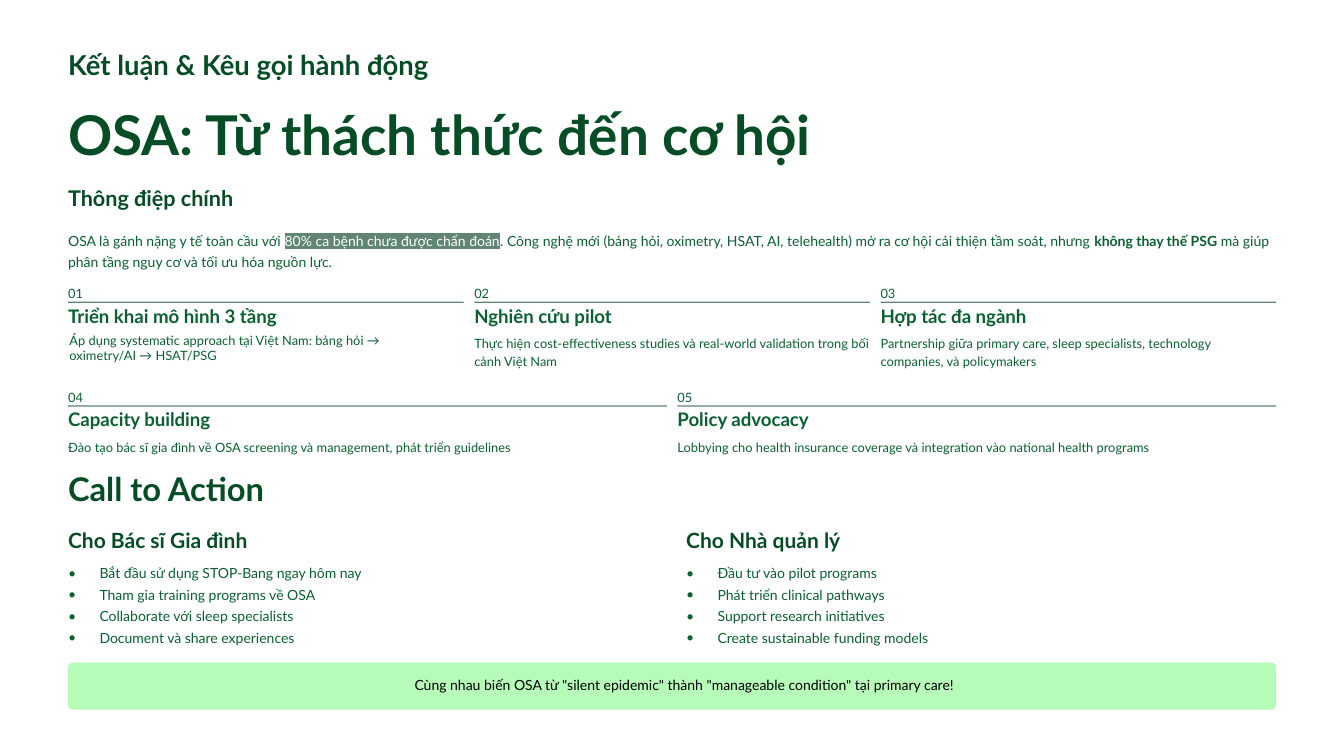
from lxml.etree import SubElement
from pptx import Presentation
from pptx.dml.color import RGBColor
from pptx.enum.shapes import MSO_SHAPE
from pptx.enum.text import PP_ALIGN
from pptx.oxml import parse_xml
from pptx.oxml.ns import qn
from pptx.util import Cm, Pt

DARK, GREEN, MUTED, MINT, WHITE = "064D26", "096130", "608571", "B6FCB8", "FFFFFF"
DRAWING_NS = "http://schemas.openxmlformats.org/drawingml/2006/main"
PAGE_WIDTH, PAGE_HEIGHT = 40.64, 22.86
LEFT, WIDTH, GAP = 2.06, 36.53, 0.32

MESSAGE = [
    ("OSA là gánh nặng y tế toàn cầu với ", {}),
    ("80% ca bệnh chưa được chẩn đoán", {"color": WHITE, "highlight": MUTED}),
    (". Công nghệ mới (bảng hỏi, oximetry, HSAT, AI, telehealth) mở ra cơ hội "
     "cải thiện tầm soát, nhưng ", {}),
    ("không thay thế PSG", {"bold": True}),
    (" mà giúp phân tầng nguy cơ và tối ưu hóa nguồn lực.", {}),
]
TOP_STEPS = [
    ("01", "Triển khai mô hình 3 tầng",
     "Áp dụng systematic approach tại Việt Nam: bảng hỏi → oximetry/AI → HSAT/PSG"),
    ("02", "Nghiên cứu pilot",
     "Thực hiện cost-effectiveness studies và real-world validation trong bối cảnh Việt Nam"),
    ("03", "Hợp tác đa ngành",
     "Partnership giữa primary care, sleep specialists, technology companies, và policymakers"),
]
BOTTOM_STEPS = [
    ("04", "Capacity building",
     "Đào tạo bác sĩ gia đình về OSA screening và management, phát triển guidelines"),
    ("05", "Policy advocacy",
     "Lobbying cho health insurance coverage và integration vào national health programs"),
]
ACTIONS = [
    ("Cho Bác sĩ Gia đình", [
        "Bắt đầu sử dụng STOP-Bang ngay hôm nay",
        "Tham gia training programs về OSA",
        "Collaborate với sleep specialists",
        "Document và share experiences"]),
    ("Cho Nhà quản lý", [
        "Đầu tư vào pilot programs",
        "Phát triển clinical pathways",
        "Support research initiatives",
        "Create sustainable funding models"]),
]


def paint(fill, color):
    fill.solid()
    fill.fore_color.rgb = RGBColor.from_string(color)


def add_run(paragraph, content, size, color, bold=False, highlight=None):
    run = paragraph.add_run()
    run.text = content
    font = run.font
    font.name, font.size, font.bold = "Lato", Pt(size), bold
    paint(font.fill, color)
    if highlight:
        mark = parse_xml(f'<a:highlight xmlns:a="{DRAWING_NS}">'
                         f'<a:srgbClr val="{highlight}"/></a:highlight>')
        run._r.rPr.find(qn("a:solidFill")).addnext(mark)


def add_bullet(paragraph):
    properties = paragraph._p.get_or_add_pPr()
    properties.set("marL", str(Cm(0.95)))
    properties.set("indent", str(-Cm(0.95)))
    SubElement(properties, qn("a:buSzPct")).set("val", "100000")
    SubElement(properties, qn("a:buFont")).set("typeface", "Lato")
    SubElement(properties, qn("a:buChar")).set("char", "•")


def add_text(slide, box, paragraphs, size=12, color=GREEN, bold=False, line=15,
             align=PP_ALIGN.LEFT, bullets=False, after=0, inset=(0, 0)):
    """Place paragraphs, each a string or a list of (text, run format) pairs."""
    frame = slide.shapes.add_textbox(*map(Cm, box)).text_frame
    frame.word_wrap = True
    frame.margin_left = frame.margin_right = Cm(inset[0])
    frame.margin_top = frame.margin_bottom = Cm(inset[1])
    for index, content in enumerate(paragraphs):
        paragraph = frame.add_paragraph() if index else frame.paragraphs[0]
        paragraph.alignment = align
        paragraph.space_after = Pt(after)
        if line:
            paragraph.line_spacing = Pt(line)
        if bullets:
            add_bullet(paragraph)
        runs = [(content, {})] if isinstance(content, str) else content
        for words, changes in runs:
            add_run(paragraph, words,
                    **{"size": size, "color": color, "bold": bold, **changes})


def add_block(slide, box, color, preset=MSO_SHAPE.RECTANGLE):
    block = slide.shapes.add_shape(preset, *map(Cm, box))
    block.shadow.inherit = False
    paint(block.fill, color)
    block.line.fill.background()
    return block


def add_header(slide, left, top, width):
    heading = {"color": DARK, "bold": True}
    add_text(slide, (left, top, 12.73, 1.04), ["Kết luận & Kêu gọi hành động"],
             size=23.5, line=29.5, **heading)
    add_text(slide, (left, top + 1.53, 25.91, 2.08), ["OSA: Từ thách thức đến cơ hội"],
             size=47, line=59, **heading)
    add_text(slide, (left, top + 4.12, 6.68, 0.84), ["Thông điệp chính"],
             size=18.5, line=23.5, **heading)
    add_text(slide, (left, top + 5.46, width, 1.35), [MESSAGE], line=18.5)


def add_step(slide, left, top, width, step, height, compact=False):
    number, name, detail = step
    add_text(slide, (left, top, 0.8, 0.41), [number], size=11)
    add_block(slide, (left, top + 0.53, width, 0.04), MUTED)
    add_text(slide, (left, top + 0.78, 7, 0.53), [name], size=16, bold=True, line=14.5)
    if compact:
        add_text(slide, (left - 0.21, top + 1.34, width, 1.68), [detail], size=11,
                 line=None, inset=(0.25, 0.13))
    else:
        add_text(slide, (left, top + 1.5, width, height), [detail], size=11)


def add_step_row(slide, left, top, width, steps, height):
    step_width = (width - GAP * (len(steps) - 1)) / len(steps)
    for index, step in enumerate(steps):
        add_step(slide, left + index * (step_width + GAP), top, step_width, step,
                 height, compact=step is TOP_STEPS[0])


def add_call_to_action(slide, left, top, width):
    add_text(slide, (left, top, 6.68, 0.84), ["Call to Action"],
             size=28, color=DARK, bold=True, line=23.5)
    list_width = 17.84
    for index, (audience, tasks) in enumerate(ACTIONS):
        column = left + index * (width - list_width)
        add_text(slide, (column, top + 1.68, 7, 0.53), [audience],
                 size=18, color=DARK, bold=True, line=14.5)
        add_text(slide, (column, top + 2.52, list_width, 2.49), tasks,
                 bullets=True, after=3.5)


def add_closing(slide, left, top, width, height):
    banner = add_block(slide, (left, top, width, height), MINT, MSO_SHAPE.ROUNDED_RECTANGLE)
    banner.adjustments[0] = 0.1
    add_text(slide, (left + 1.09, top + 0.41, 35.1, 0.53),
             ['Cùng nhau biến OSA từ "silent epidemic" thành '
              '"manageable condition" tại primary care!'],
             color="000000", align=PP_ALIGN.CENTER)


def main():
    deck = Presentation()
    deck.slide_width, deck.slide_height = Cm(PAGE_WIDTH), Cm(PAGE_HEIGHT)
    slide = deck.slides.add_slide(deck.slide_layouts[6])
    add_block(slide, (0, 0, PAGE_WIDTH, PAGE_HEIGHT), WHITE)
    add_header(slide, LEFT, 1.42, WIDTH)
    add_step_row(slide, LEFT, 8.59, WIDTH, TOP_STEPS, 1.07)
    add_step_row(slide, LEFT, 11.73, WIDTH, BOTTOM_STEPS, 0.53)
    add_call_to_action(slide, LEFT, 14.53, WIDTH)
    add_closing(slide, LEFT, 20.04, WIDTH, 1.42)
    deck.save("out.pptx")


if __name__ == "__main__":
    main()
